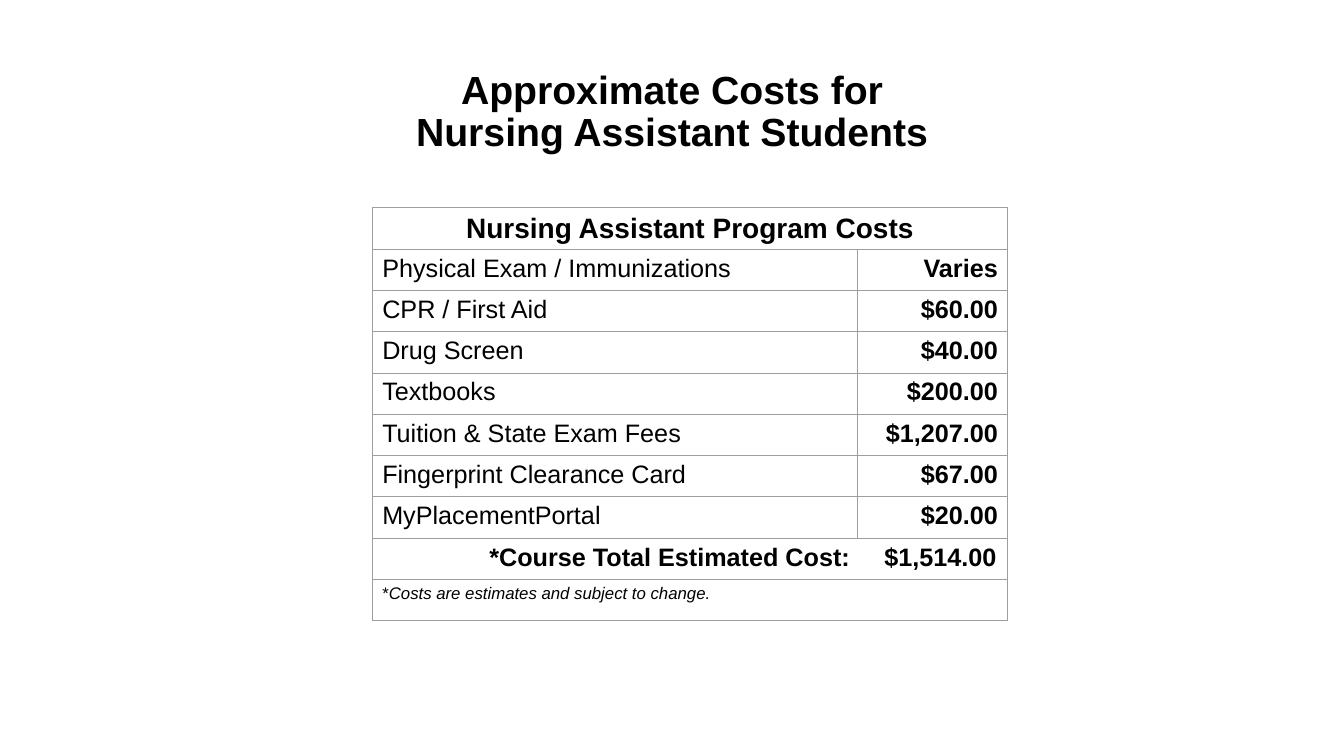
from lxml import etree
from pptx import Presentation
from pptx.dml.color import RGBColor
from pptx.enum.text import MSO_ANCHOR, MSO_AUTO_SIZE, PP_ALIGN
from pptx.oxml.ns import qn
from pptx.util import Cm, Pt

LEFT, CENTER, RIGHT = PP_ALIGN.LEFT, PP_ALIGN.CENTER, PP_ALIGN.RIGHT
MIDDLE = MSO_ANCHOR.MIDDLE
NO_AUTOFIT = MSO_AUTO_SIZE.NONE
BLACK, GRAY = "000000", "9E9E9E"
TITLE_ONLY = 5
ROW_HEIGHT = 1.04
COLUMN_WIDTHS = (12.24, 3.78)
TOTAL_TABS = (11.79, 15.48)

COSTS = [
    ("Physical Exam / Immunizations", "Varies"),
    ("CPR / First Aid", "$60.00"),
    ("Drug Screen", "$40.00"),
    ("Textbooks", "$200.00"),
    ("Tuition & State Exam Fees", "$1,207.00"),
    ("Fingerprint Clearance Card", "$67.00"),
    ("MyPlacementPortal", "$20.00"),
]


def style_paragraph(paragraph, size, bold, alignment):
    paragraph.alignment = alignment
    for run in paragraph.runs:
        run.font.name = "Arial"
        run.font.size = Pt(size)
        run.font.bold = bold
        run.font.color.rgb = RGBColor.from_string(BLACK)


def fill_cell(cell, text, size, bold, alignment):
    cell.text_frame.text = text
    style_paragraph(cell.text_frame.paragraphs[0], size, bold, alignment)


presentation = Presentation()
presentation.slide_width = Cm(33.87)
presentation.slide_height = Cm(19.05)
slide = presentation.slides.add_slide(presentation.slide_layouts[TITLE_ONLY])

# Title
title = slide.shapes.title
title.left, title.top, title.width, title.height = Cm(2.33), Cm(1.01), Cm(29.21), Cm(3.68)
title_frame = title.text_frame
title_frame.text = "Approximate Costs for\vNursing Assistant Students"
title_frame.auto_size = NO_AUTOFIT
title_frame.vertical_anchor = MIDDLE
title_frame.paragraphs[0].line_spacing = 0.9
style_paragraph(title_frame.paragraphs[0], 28, True, CENTER)

# Cost table: heading, one row per cost, total, footnote
row_count = len(COSTS) + 3
total_row, note_row = row_count - 2, row_count - 1
table = slide.shapes.add_table(
    row_count, 2, Cm(9.38), Cm(5.24), Cm(sum(COLUMN_WIDTHS)), Cm(ROW_HEIGHT * row_count)
).table
table.first_row = False
table.horz_banding = False
for column, width in zip(table.columns, COLUMN_WIDTHS):
    column.width = Cm(width)
for row in table.rows:
    row.height = Cm(ROW_HEIGHT)
for row_index in (0, total_row, note_row):
    table.cell(row_index, 0).merge(table.cell(row_index, 1))

# Borders and clear fill
for cell in table.iter_cells():
    cell.margin_bottom = Cm(0.08)
    properties = cell._tc.get_or_add_tcPr()
    for side in ("a:lnL", "a:lnR", "a:lnT", "a:lnB"):
        line = etree.SubElement(properties, qn(side), w=str(Pt(0.75)))
        line_fill = etree.SubElement(line, qn("a:solidFill"))
        etree.SubElement(line_fill, qn("a:srgbClr"), val=GRAY)
    cell.fill.background()

# Heading and costs
fill_cell(table.cell(0, 0), "Nursing Assistant Program Costs", 20, True, CENTER)
for row_index, (item, cost) in enumerate(COSTS, start=1):
    fill_cell(table.cell(row_index, 0), item, 18, False, LEFT)
    fill_cell(table.cell(row_index, 1), cost, 18, True, RIGHT)

# Total, with label and amount on right-aligned tabs
total_cell = table.cell(total_row, 0)
fill_cell(total_cell, "\t*Course Total Estimated Cost:\t$1,514.00", 18, True, LEFT)
paragraph_properties = total_cell.text_frame.paragraphs[0]._p.get_or_add_pPr()
tab_list = etree.SubElement(paragraph_properties, qn("a:tabLst"))
for position in TOTAL_TABS:
    etree.SubElement(tab_list, qn("a:tab"), pos=str(Cm(position)), algn="r")

# Footnote
note_cell = table.cell(note_row, 0)
note_cell.text_frame.text = "*"
note_paragraph = note_cell.text_frame.paragraphs[0]
note_run = note_paragraph.add_run()
note_run.text = "Costs are estimates and subject to change."
note_run.font.italic = True
style_paragraph(note_paragraph, 12, False, LEFT)

presentation.save("out.pptx")
